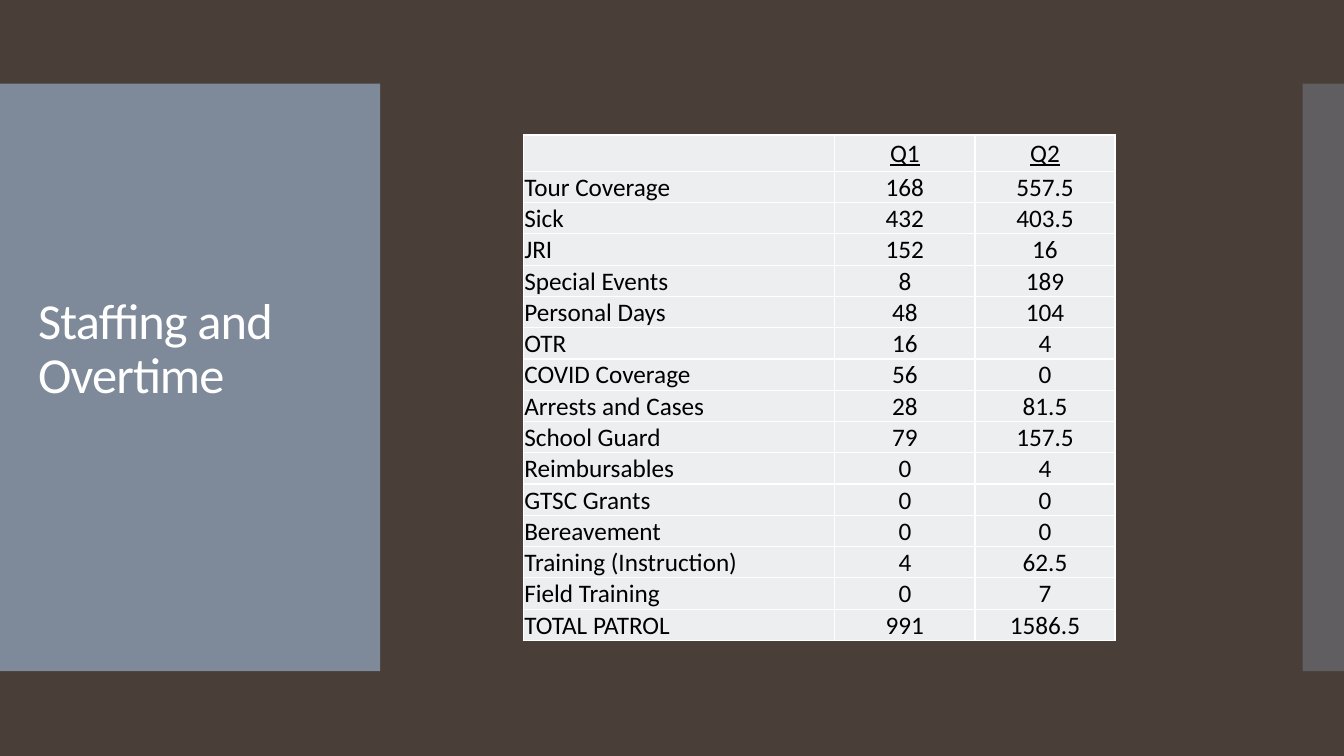
from dataclasses import dataclass

from lxml.etree import SubElement
from pptx import Presentation
from pptx.dml.color import RGBColor
from pptx.enum.shapes import MSO_SHAPE as Preset
from pptx.enum.text import MSO_ANCHOR as Anchor, PP_ALIGN as Align
from pptx.oxml.ns import qn
from pptx.slide import Slide
from pptx.table import _Cell as Cell
from pptx.util import Inches, Pt

BROWN = RGBColor(0x4A, 0x3F, 0x38)
SLATE = RGBColor(0x81, 0x8E, 0x9F)
PALE = RGBColor(0xED, 0xEE, 0xF0)
WHITE = RGBColor(0xFF, 0xFF, 0xFF)
BLACK = RGBColor(0x00, 0x00, 0x00)
FONT = "Calibri"

CELL_FORMAT = {
    "margin_left": Inches(0.01),
    "margin_right": Inches(0.01),
    "margin_top": Inches(0.01),
    "margin_bottom": Inches(0),
}
TITLE_FORMAT = {
    "word_wrap": True,
    "vertical_anchor": Anchor.MIDDLE,
    "margin_bottom": Inches(0.59),  # lifts the title above the panel's middle
}


@dataclass(frozen=True)
class Panel:
    left: float
    width: float
    opacity: int  # percent


@dataclass(frozen=True)
class Overtime:
    reason: str
    q1: str
    q2: str


PANELS = [Panel(0, 3.77, 95), Panel(12.92, 0.42, 40)]
HOURS = [
    Overtime("", "Q1", "Q2"),
    Overtime("Tour Coverage", "168", "557.5"),
    Overtime("Sick", "432", "403.5"),
    Overtime("JRI", "152", "16"),
    Overtime("Special Events", "8", "189"),
    Overtime("Personal Days", "48", "104"),
    Overtime("OTR", "16", "4"),
    Overtime("COVID Coverage", "56", "0"),
    Overtime("Arrests and Cases", "28", "81.5"),
    Overtime("School Guard", "79", "157.5"),
    Overtime("Reimbursables", "0", "4"),
    Overtime("GTSC Grants", "0", "0"),
    Overtime("Bereavement", "0", "0"),
    Overtime("Training (Instruction)", "4", "62.5"),
    Overtime("Field Training", "0", "7"),
    Overtime("TOTAL PATROL", "991", "1586.5"),
]
COLUMN_WIDTHS = [3.09, 1.39, 1.39]
HEADER_HEIGHT, ROW_HEIGHT = 0.36, 0.29


def draw_panel(slide: Slide, panel: Panel) -> None:
    band = slide.shapes.add_shape(
        Preset.RECTANGLE, Inches(panel.left), Inches(0.83), Inches(panel.width), Inches(5.83)
    )
    band.shadow.inherit = False
    band.line.fill.background()
    band.fill.solid()
    band.fill.fore_color.rgb = SLATE
    colour = band.fill._xPr.find(qn("a:solidFill"))[0]
    SubElement(colour, qn("a:alpha"), val=str(panel.opacity * 1000))


def draw_title(slide: Slide, wording: str) -> None:
    title = slide.shapes.add_textbox(Inches(0.28), Inches(1.23), Inches(3.22), Inches(5.03))
    for name, value in TITLE_FORMAT.items():
        setattr(title.text_frame, name, value)
    line = title.text_frame.paragraphs[0]
    line.line_spacing = 0.9
    run = line.add_run()
    run.text = wording
    for name, value in {"name": FONT, "size": Pt(36)}.items():
        setattr(run.font, name, value)
    run.font.color.rgb = WHITE
    run.font._element.set("spc", "-60")


def add_borders(cell: Cell) -> None:
    properties = cell._tc.get_or_add_tcPr()
    for side in ("lnL", "lnR", "lnT", "lnB"):
        border = SubElement(properties, qn(f"a:{side}"), w=str(Pt(1)))
        fill = SubElement(border, qn("a:solidFill"))
        SubElement(fill, qn("a:srgbClr"), val=str(WHITE))


def fill_cell(cell: Cell, wording: str, is_header: bool, is_number: bool) -> None:
    add_borders(cell)
    cell.fill.solid()
    cell.fill.fore_color.rgb = PALE
    for name, value in CELL_FORMAT.items():
        setattr(cell, name, value)
    cell.vertical_anchor = Anchor.MIDDLE if is_header else Anchor.BOTTOM
    entry = cell.text_frame.paragraphs[0]
    entry.alignment = Align.CENTER if is_number else Align.LEFT
    # An empty cell takes its size from the paragraph's end mark
    if wording:
        run = entry.add_run()
        run.text = wording
        for name, value in {"name": FONT, "size": Pt(18), "underline": is_header}.items():
            setattr(run.font, name, value)
        run.font.color.rgb = BLACK
    else:
        SubElement(entry._p, qn("a:endParaRPr"), sz="1800")


def draw_hours(slide: Slide, hours: list[Overtime]) -> None:
    frame = slide.shapes.add_table(
        len(hours), len(COLUMN_WIDTHS), Inches(5.19), Inches(1.34), Inches(5.87), Inches(4.71)
    )
    table = frame.table
    table.first_row = table.horz_banding = False
    for column, width in zip(table.columns, COLUMN_WIDTHS):
        column.width = Inches(width)
    for r, item in enumerate(hours):
        table.rows[r].height = Inches(ROW_HEIGHT if r else HEADER_HEIGHT)
        for c, wording in enumerate((item.reason, item.q1, item.q2)):
            fill_cell(table.cell(r, c), wording, is_header=r == 0, is_number=c > 0)


def main() -> None:
    deck = Presentation()
    deck.slide_width, deck.slide_height = Inches(13.33), Inches(7.5)
    slide = deck.slides.add_slide(deck.slide_layouts[6])

    # Background and side panels
    slide.background.fill.solid()
    slide.background.fill.fore_color.rgb = BROWN
    for panel in PANELS:
        draw_panel(slide, panel)

    # Title and overtime hours
    draw_title(slide, "Staffing and Overtime")
    draw_hours(slide, HOURS)

    deck.save("out.pptx")


if __name__ == "__main__":
    main()
